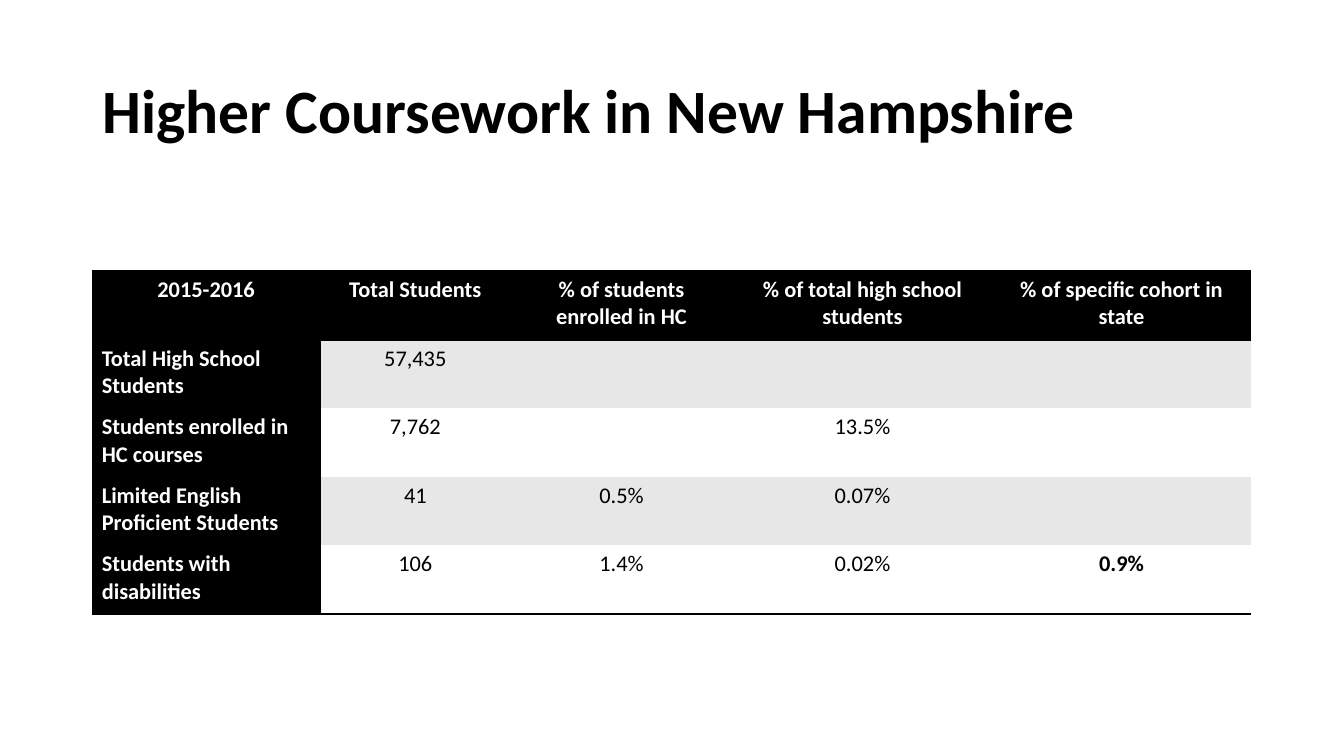
from dataclasses import dataclass

from lxml import etree
from pptx import Presentation
from pptx import util as u
from pptx.dml.color import RGBColor
from pptx.enum import text
from pptx.oxml import ns


@dataclass(frozen=True)
class Theme:
    """Colours, font and type sizes of the slide."""
    font: str = "Calibri"
    ink: str = "000000"
    paper: str = "FFFFFF"
    band: str = "E7E7E7"
    title_size: int = 44
    table_size: int = 16
    rule_width: int = 2


THEME = Theme()
NO_GRID_STYLE = "{2D5ABB26-0587-4C30-8999-92F81FD0307C}"
COLUMN_WIDTHS = (2.27, 1.88, 2.21, 2.57, 2.57)
ROW_HEIGHT = 0.68
ENROLLMENT = (
    ("2015-2016", "Total Students", "% of students enrolled in HC",
     "% of total high school students", "% of specific cohort in state"),
    ("Total High School Students", "57,435", "", "", ""),
    ("Students enrolled in HC courses", "7,762", "", "13.5%", ""),
    ("Limited English Proficient Students", "41", "0.5%", "0.07%", ""),
    ("Students with disabilities", "106", "1.4%", "0.02%", "0.9%"),
)


def write(frame, words, *, size, color, bold=False, align=text.PP_ALIGN.LEFT, spacing=None):
    """Put one formatted paragraph into a text frame."""
    paragraph = frame.paragraphs[0]
    paragraph.alignment = align
    paragraph.line_spacing = spacing
    run = paragraph.add_run()
    run.text = words
    run.font.name = THEME.font
    run.font.size = u.Pt(size)
    run.font.bold = bold
    run.font.color.rgb = RGBColor.from_string(color)


def rule(cell, edge):
    """Draw a rule on the named edge of a cell."""
    line = etree.SubElement(cell._tc.get_or_add_tcPr(), ns.qn(f"a:{edge}"),
                            w=str(u.Pt(THEME.rule_width)))
    fill = etree.SubElement(line, ns.qn("a:solidFill"))
    etree.SubElement(fill, ns.qn("a:srgbClr"), val=THEME.ink)


def add_title(slide, left, top, width, height):
    """Place the slide title in its box."""
    title = slide.shapes.add_textbox(*map(u.Inches, (left, top, width, height)))
    title.text_frame.word_wrap = True
    title.text_frame.vertical_anchor = text.MSO_ANCHOR.MIDDLE
    write(title.text_frame, "Higher Coursework in New Hampshire",
          size=THEME.title_size, color=THEME.ink, bold=True, spacing=0.9)


def fill_cell(cell, words, row, column):
    """Style and fill one cell according to its place in the table."""
    last_row = len(ENROLLMENT) - 1
    heading = row == 0 or column == 0
    if row == 0:
        rule(cell, "lnT")
    if row in (0, last_row):
        rule(cell, "lnB")
    band = THEME.band if row % 2 else THEME.paper
    cell.fill.solid()
    cell.fill.fore_color.rgb = RGBColor.from_string(THEME.ink if heading else band)
    if words:
        in_stub = column == 0 and row > 0
        write(cell.text_frame, words, size=THEME.table_size,
              color=THEME.paper if heading else THEME.ink,
              bold=heading or (row == last_row and column == len(COLUMN_WIDTHS) - 1),
              align=text.PP_ALIGN.LEFT if in_stub else text.PP_ALIGN.CENTER)


def add_enrollment(slide, left, top):
    """Place the enrollment table with its top left corner at the given point."""
    size = sum(COLUMN_WIDTHS), ROW_HEIGHT * len(ENROLLMENT)
    frame = slide.shapes.add_table(len(ENROLLMENT), len(COLUMN_WIDTHS),
                                   *map(u.Inches, (left, top, *size)))
    table = frame.table
    next(frame._element.iter(ns.qn("a:tableStyleId"))).text = NO_GRID_STYLE
    for column, width in zip(table.columns, COLUMN_WIDTHS):
        column.width = u.Inches(width)
    for row, entries in enumerate(ENROLLMENT):
        table.rows[row].height = u.Inches(ROW_HEIGHT)
        for column, words in enumerate(entries):
            fill_cell(table.cell(row, column), words, row, column)


def main():
    """Build and save the slide."""
    deck = Presentation()
    deck.slide_width, deck.slide_height = u.Inches(13.33), u.Inches(7.5)
    slide = deck.slides.add_slide(deck.slide_layouts[6])
    add_title(slide, 0.92, 0.4, 11.5, 1.45)
    add_enrollment(slide, 0.91, 2.69)
    deck.save("out.pptx")


if __name__ == "__main__":
    main()
